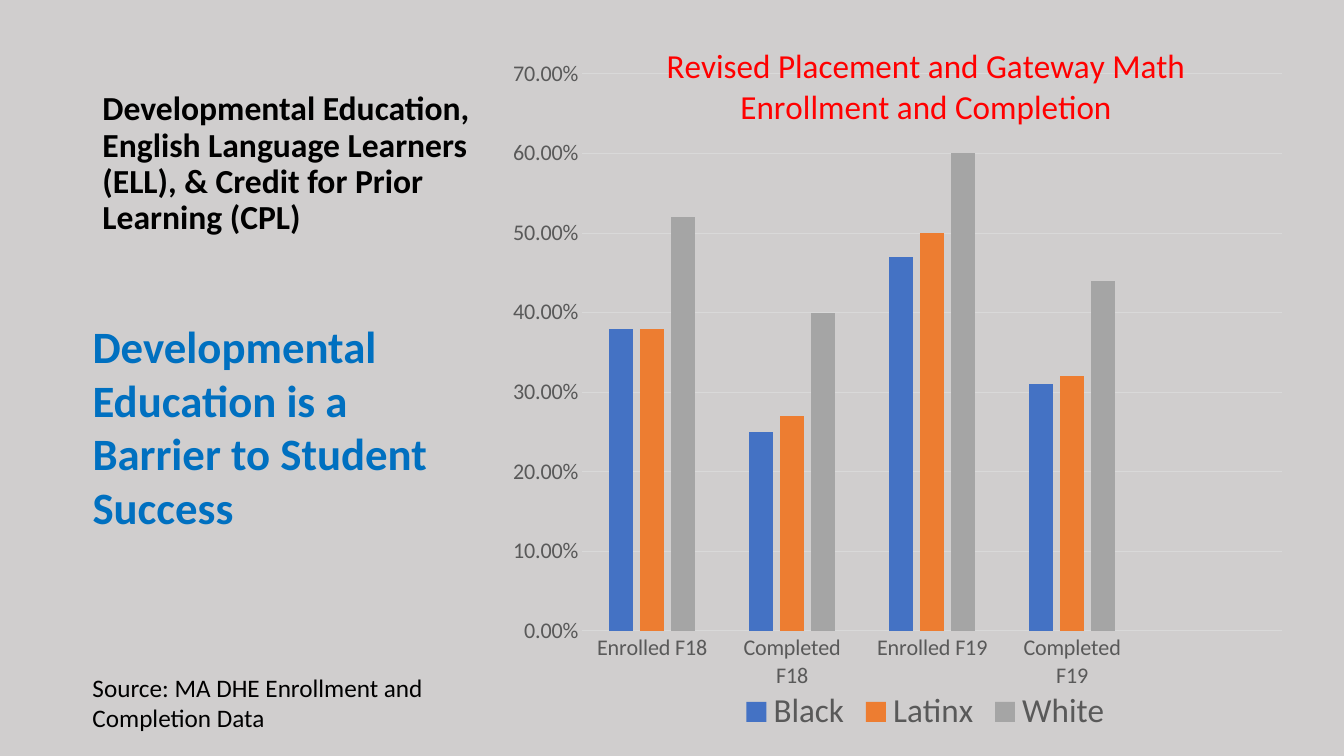
import pptx
import pptx.chart.data
import pptx.dml.color
import pptx.enum.chart
import pptx.enum.text
import pptx.oxml
import pptx.oxml.ns
import pptx.util

Pt = pptx.util.Pt


def style(font, size, color, bold=False):
    font.name = "Calibri"
    font.size = Pt(size)
    font.bold = bold
    font.color.rgb = pptx.dml.color.RGBColor.from_string(color)


def manual_layout(**settings):
    """Chart layout element; settings are in schema order."""
    values = "".join(f'<c:{tag} val="{value}"/>' for tag, value in settings.items())
    return pptx.oxml.parse_xml(
        f'<c:layout {pptx.oxml.ns.nsdecls("c")}><c:manualLayout>{values}</c:manualLayout></c:layout>')


deck = pptx.Presentation()
deck.slide_width, deck.slide_height = Pt(960), Pt(540)
slide = deck.slides.add_slide(deck.slide_layouts[5])

# Background
background = slide.background.fill
background.solid()
background.fore_color.rgb = pptx.dml.color.RGBColor.from_string("D0CECE")

# Title
topic = slide.shapes.title
topic.left, topic.top, topic.width, topic.height = Pt(66), Pt(36), Pt(310), Pt(176)
topic_frame = topic.text_frame
topic_frame.word_wrap = True
topic_frame.auto_size = pptx.enum.text.MSO_AUTO_SIZE.NONE
topic_frame.vertical_anchor = pptx.enum.text.MSO_ANCHOR.TOP
topic_frame.margin_top = Pt(29.5)
topic_line = topic_frame.paragraphs[0]
topic_line.alignment = pptx.enum.text.PP_ALIGN.LEFT
topic_line.line_spacing = 0.9
topic_run = topic_line.add_run()
topic_run.text = "Developmental Education, English Language Learners (ELL), & Credit for Prior Learning (CPL)"
style(topic_run.font, 24, "000000", bold=True)

# Enrollment and completion chart
rates = pptx.chart.data.CategoryChartData(number_format="0.00%")
rates.categories = ["Enrolled F18", "Completed F18", "Enrolled F19", "Completed F19", ""]
groups = [
    ("Black", "4472C4", (0.38, 0.25, 0.47, 0.31, None)),
    ("Latinx", "ED7D31", (0.38, 0.27, 0.5, 0.32, None)),
    ("White", "A5A5A5", (0.52, 0.4, 0.6, 0.44, None)),
]
for group, _, shares in groups:
    rates.add_series(group, shares)
chart = slide.shapes.add_chart(
    pptx.enum.chart.XL_CHART_TYPE.COLUMN_CLUSTERED,
    Pt(366.5), Pt(16), Pt(581), Pt(512), rates).chart
style(chart.font, 10, "000000")

bars = chart.plots[0]
bars.gap_width, bars.overlap = 219, -27
bars.vary_by_categories = False
for series, (_, color, _) in zip(bars.series, groups):
    series.format.fill.solid()
    series.format.fill.fore_color.rgb = pptx.dml.color.RGBColor.from_string(color)

# Axes and gridlines
terms, percents = chart.category_axis, chart.value_axis
for axis in (terms, percents):
    axis.major_tick_mark = axis.minor_tick_mark = pptx.enum.chart.XL_TICK_MARK.NONE
    style(axis.tick_labels.font, 16, "595959")
percents.minimum_scale, percents.maximum_scale, percents.major_unit = 0, 0.7, 0.1
percents.tick_labels.number_format = "0.00%"
percents.tick_labels.number_format_is_linked = False
percents.format.line.fill.background()
for line in (terms.format.line, percents.major_gridlines.format.line):
    line.width = Pt(0.75)
    line.color.rgb = pptx.dml.color.RGBColor.from_string("D9D9D9")

# Legend
chart.has_legend = True
chart.legend.position = pptx.enum.chart.XL_LEGEND_POSITION.BOTTOM
chart.legend.include_in_layout = False
style(chart.legend.font, 24, "595959")

# Chart heading, laid over the top gridline
chart.has_title = True
heading_run = chart.chart_title.text_frame.paragraphs[0].add_run()
heading_run.text = "Revised Placement and Gateway Math Enrollment and Completion"
style(heading_run.font, 24, "FF0000")
heading = chart.element.xpath("c:chart/c:title")[0]
plot_area = chart.element.xpath("c:chart/c:plotArea")[0]
for part in (heading, plot_area):
    for layout in part.xpath("c:layout"):
        part.remove(layout)
heading.xpath("c:tx")[0].addnext(manual_layout(xMode="edge", yMode="edge", x=0.17, y=0.02))
plot_area.insert(0, manual_layout(
    layoutTarget="inner", xMode="edge", yMode="edge", x=0.072, y=0.072, w=0.873, h=0.777))

# Key message and source
notes = [
    ("Developmental Education is a Barrier to Student Success", (59, 224, 258.5, 163), 32, "0070C0", True),
    ("Source: MA DHE Enrollment and Completion Data", (59, 476.5, 296, 51), 18, "000000", False),
]
for wording, place, size, color, bold in notes:
    note = slide.shapes.add_textbox(*map(Pt, place)).text_frame
    note.word_wrap = True
    note.auto_size = pptx.enum.text.MSO_AUTO_SIZE.SHAPE_TO_FIT_TEXT
    note_run = note.paragraphs[0].add_run()
    note_run.text = wording
    style(note_run.font, size, color, bold)

deck.save("out.pptx")
